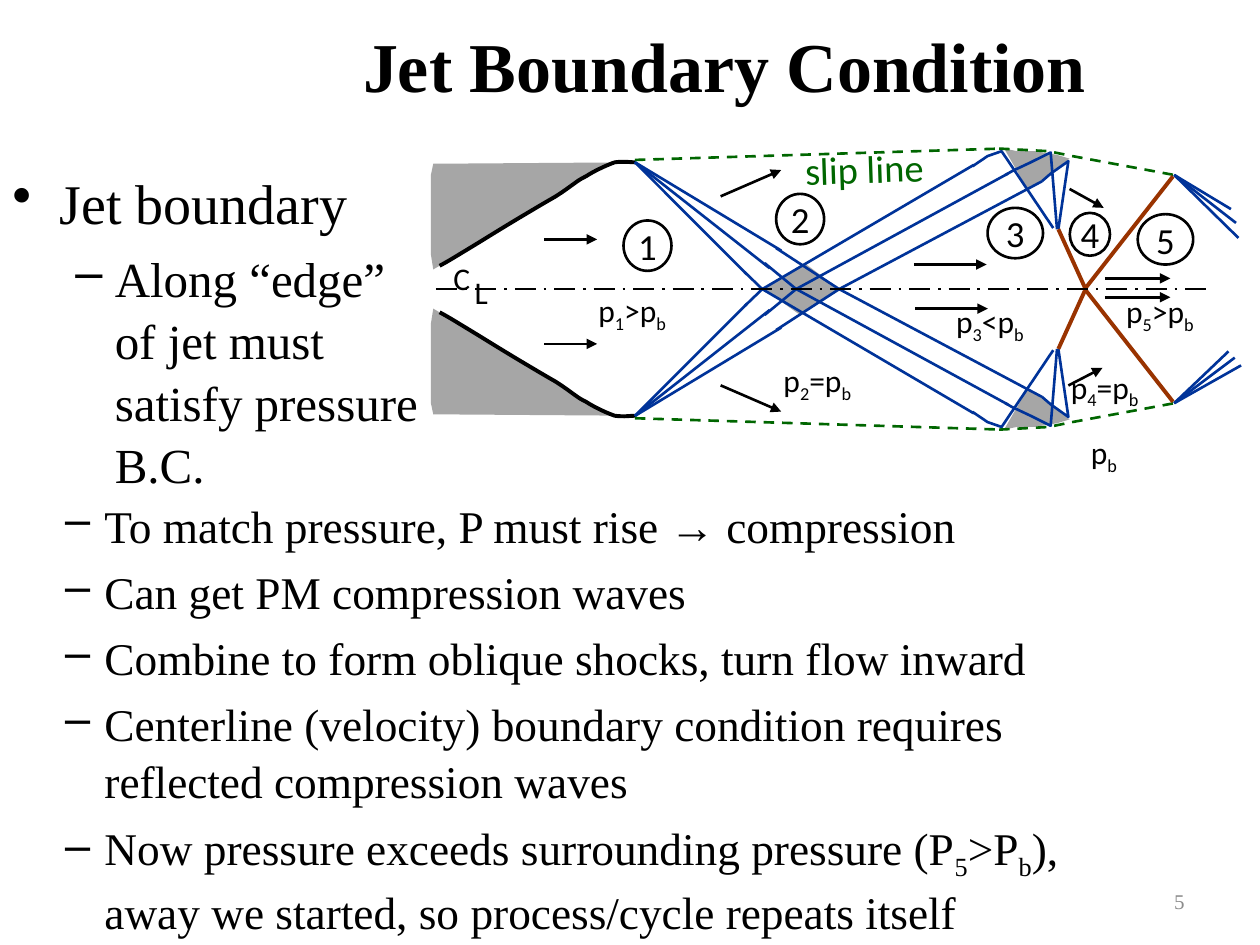
from dataclasses import dataclass

from lxml import etree
from pptx import Presentation
from pptx.dml.color import RGBColor
from pptx.enum.dml import MSO_LINE_DASH_STYLE as Dash
from pptx.enum.shapes import MSO_CONNECTOR, MSO_SHAPE
from pptx.enum.text import MSO_ANCHOR as Anchor, PP_ALIGN as Align
from pptx.oxml.ns import qn
from pptx.util import Pt


@dataclass(frozen=True)
class Theme:
    black: str = "000000"
    white: str = "FFFFFF"
    gray: str = "A6A6A6"
    muted: str = "8C8C8C"
    wave: str = "003399"
    shock: str = "993300"
    boundary: str = "006600"
    serif: str = "Times New Roman"
    sans: str = "Calibri"
    title: float = 40
    heading: float = 32
    point: float = 28
    detail: float = 25.9
    slip: float = 22
    number: float = 21
    label: float = 18
    footer: float = 12
    thin: float = 1.5
    thick: float = 2.25


@dataclass(frozen=True)
class Box:
    left: float
    top: float
    width: float
    height: float

    def place(self, x, rise):
        return Pt(self.left + x), Pt(self.top + self.height / 2 - rise)


THEME = Theme()
WALL = [(5, 13.3), (9.4, 15.5), (17.3, 20.5), (28.1, 27), (39.6, 34.2), (61.2, 47.2),
        (71.3, 52.9), (81.4, 59.4), (82.8, 61.6), (88.6, 64.4), (94.3, 68),
        (100.8, 70.9), (105.1, 72.4), (110.2, 73.1), (114.5, 72.4), (116.6, 72.4)]
NOZZLE_EDGE = [(1.4, 71.6), (0, 65), (0, 20), (1.4, 11.2)]
LIP = (116.6, 72.5)
EXPANSION_ENDS = [(180.7, 8.3), (193.7, 11.9), (200.2, 22)]
CROSSINGS = [[(179.3, 9.7), (189.4, 0), (310.3, 71)],
             [(190.8, 14.8), (208.8, 0), (329.8, 66)],
             [(197.3, 23.4), (233.3, 0), (349.2, 61.6)]]
REFLECTIONS = [[(309.6, 70.2), (318.2, 76), (326.2, 78.8), (355.7, 34.9)],
               [(328.3, 65.2), (331.9, 67.3), (342.7, 72.4), (354.2, 78.1), (357.8, 34.2)],
               [(349.2, 61.6), (354.2, 65.9), (364.3, 73.1), (358.6, 34.2)]]
REFLECTION_ZONE = [(327.6, 80.3), (341.3, 56.5), (365, 74.5), (357.8, 76.7),
                   (344.9, 78.8), (334.8, 78.8)]
CROSSING_ZONE = [(190.1, 0), (214.6, 14), (234, -0.5), (211, -14.8)]
JET_BOUNDARIES = [[(116.6, 73.8), (326.2, 80.3)],
                  [(324.7, 80.3), (352.8, 78.8), (366.5, 76), (424.8, 65.2)]]
SHOCKS = [[(358.6, 34.2), (373.7, 1)], [(373.7, 0), (424.1, 64.4)]]
SHOCK_END = (424.8, 65.2)
NEXT_FAN_ABOVE = [(461.5, 29.2), (460.1, 37.8), (457.2, 45.7)]
NEXT_FAN_BELOW = [(455.8, 35.6), (459.4, 39.2), (463, 43.6)]
FLOW_ARROWS = [((64.8, 28.4), (95, 28.4)), ((64.8, -31.3), (95, -31.3)),
               ((165.6, 53), (200.2, 68)), ((165.6, -55), (200.2, -70)),
               ((276, 14), (317.6, 14)), ((276.7, -11.2), (318.3, -11.2)),
               ((385.2, 6.1), (422.6, 6.1)), ((385.2, -4.7), (422.6, -4.7)),
               ((364.3, -55.1), (383.8, -45)), ((365, 57.2), (384.5, 46.4))]
REGIONS = [("1", 123.8, 24.8, 27.4, 28.8), ("2", 211, 40, 27.4, 28.8),
           ("3", 334, 32, 31.7, 28.8), ("4", 376.6, 31.3, 23, 24.5),
           ("5", 419.8, 28.4, 31.7, 28.8)]
LABELS = [("C", 5.8, 20.5), ("L", 18, 12.6), ("p|1|>p|b", 88.6, 2.6),
          ("p|2|=p|b", 194.4, -37.7), ("p|3|<p|b", 293, -3.8),
          ("p|4|=p|b", 358.6, -41.3), ("p|5|>p|b", 390.2, 1.9), ("p|b", 370.1, -78.7)]


def rgb(value):
    return RGBColor.from_string(value)


def add_runs(paragraph, text, size, color, font, bold=False):
    for index, part in enumerate(text.split("|")):
        run = paragraph.add_run()
        run.text = part
        run.font.size, run.font.name, run.font.bold = Pt(size), font, bold
        run.font.color.rgb = rgb(color)
        if index % 2:
            run.font._element.set("baseline", "-25000")


def add_text_box(slide, box, anchor=Anchor.TOP):
    shape = slide.shapes.add_textbox(Pt(box.left), Pt(box.top), Pt(box.width), Pt(box.height))
    shape.text_frame.word_wrap = True
    shape.text_frame.vertical_anchor = anchor
    return shape


def add_line_of_text(slide, box, text, size, color, font, align=Align.LEFT,
                     anchor=Anchor.TOP, bold=False):
    shape = add_text_box(slide, box, anchor)
    paragraph = shape.text_frame.paragraphs[0]
    paragraph.alignment = align
    add_runs(paragraph, text, size, color, font, bold)
    return shape


def add_bullets(slide, box, items):
    frame = add_text_box(slide, box).text_frame
    for index, (mark, text, size, margin, hanging) in enumerate(items):
        paragraph = frame.add_paragraph() if index else frame.paragraphs[0]
        properties = paragraph._p.get_or_add_pPr()
        properties.set("marL", str(Pt(margin)))
        properties.set("indent", str(-Pt(hanging)))
        etree.SubElement(properties, qn("a:buChar")).set("char", mark)
        paragraph.line_spacing = 1.05
        paragraph.space_before = Pt(round(size * 0.2, 1) if index else 0)
        add_runs(paragraph, text, size, THEME.black, THEME.serif)


def add_outline(slide, box, points, line=None, width=THEME.thin, fill=None, dash=None):
    start, *others = [box.place(*point) for point in points]
    builder = slide.shapes.build_freeform(*start, scale=1.0)
    builder.add_line_segments(others, close=fill is not None)
    shape = builder.convert_to_shape()
    shape.shadow.inherit = False
    if fill:
        shape.fill.solid()
        shape.fill.fore_color.rgb = rgb(fill)
        shape.line.fill.background()
    else:
        shape.fill.background()
        shape.line.color.rgb, shape.line.width = rgb(line), Pt(width)
        shape.line.dash_style = dash


def add_segment(slide, box, start, end, color, width=THEME.thin, dash=None, arrow=False):
    connector = slide.shapes.add_connector(
        MSO_CONNECTOR.STRAIGHT, *box.place(*start), *box.place(*end))
    connector.line.color.rgb, connector.line.width = rgb(color), Pt(width)
    connector.line.dash_style = dash
    if arrow:
        etree.SubElement(connector.line._get_or_add_ln(), qn("a:tailEnd")).set("type", "triangle")
    etree.SubElement(connector._element.spPr, qn("a:effectLst"))


def smooth_curve(controls, steps=8):
    points = [controls[0]]
    for first in range(0, len(controls) - 1, 3):
        a, b, c, d = controls[first:first + 4]
        for step in range(1, steps + 1):
            t = step / steps
            u = 1 - t
            points.append(tuple(u**3 * i + 3 * u * u * t * j + 3 * u * t * t * k + t**3 * m
                                for i, j, k, m in zip(a, b, c, d)))
    return points


def add_jet_half(slide, box, side, next_fan):
    def mirror(points):
        return [(x, side * rise) for x, rise in points]

    wall = smooth_curve(WALL)
    add_outline(slide, box, mirror(wall + NOZZLE_EDGE), fill=THEME.gray)
    add_outline(slide, box, mirror(wall), THEME.black, THEME.thick)
    add_outline(slide, box, mirror(REFLECTION_ZONE), fill=THEME.gray)
    for origin, ends in ((LIP, EXPANSION_ENDS), (SHOCK_END, next_fan)):
        for end in ends:
            add_segment(slide, box, *mirror([origin, end]), THEME.wave)
    for points in CROSSINGS + REFLECTIONS:
        add_outline(slide, box, mirror(points), THEME.wave)
    for points in JET_BOUNDARIES:
        add_outline(slide, box, mirror(points), THEME.boundary, dash=Dash.DASH)
    for points in SHOCKS:
        add_segment(slide, box, *mirror(points), THEME.shock, THEME.thick)


def add_region_number(slide, box, text, x, rise, width, height):
    left, top = box.place(x - width / 2, rise + height / 2)
    shape = slide.shapes.add_shape(MSO_SHAPE.OVAL, left, top, Pt(width), Pt(height))
    shape.shadow.inherit = False
    shape.fill.solid()
    shape.fill.fore_color.rgb = rgb(THEME.white)
    shape.line.color.rgb, shape.line.width = rgb(THEME.black), Pt(THEME.thin)
    frame = shape.text_frame
    frame.margin_left = frame.margin_right = frame.margin_top = frame.margin_bottom = 0
    frame.word_wrap = False
    frame.vertical_anchor = Anchor.MIDDLE
    frame.paragraphs[0].alignment = Align.CENTER
    add_runs(frame.paragraphs[0], text, THEME.number, THEME.black, THEME.sans)


def add_jet_diagram(slide, box):
    add_outline(slide, box, CROSSING_ZONE, fill=THEME.gray)
    add_jet_half(slide, box, 1, NEXT_FAN_ABOVE)
    add_jet_half(slide, box, -1, NEXT_FAN_BELOW)
    add_segment(slide, box, (2.9, 0), (445, 0), THEME.black, dash=Dash.LONG_DASH_DOT)
    for start, end in FLOW_ARROWS:
        add_segment(slide, box, start, end, THEME.black, arrow=True)
    for region in REGIONS:
        add_region_number(slide, box, *region)
    for text, x, rise in LABELS:
        left, top = box.place(x, rise)
        width = 68 if len(text) > 3 else 39 if len(text) > 1 else 30
        add_line_of_text(slide, Box(left.pt, top.pt, width, 36), text,
                         THEME.label, THEME.black, THEME.sans)
    slip = add_line_of_text(slide, Box(box.left + 206.7, box.top - 4.8, 87, 34), "slip line",
                            THEME.slip, THEME.boundary, THEME.sans)
    slip.rotation = 358


def main():
    presentation = Presentation()
    presentation.slide_width, presentation.slide_height = Pt(720), Pt(540)
    slide = presentation.slides.add_slide(presentation.slide_layouts[6])
    add_line_of_text(slide, Box(144, 10.8, 540, 52.6), "Jet Boundary Condition", THEME.title,
                     THEME.black, THEME.serif, Align.CENTER, Anchor.MIDDLE, True)
    add_bullets(slide, Box(0, 91, 251.3, 192), [
        ("•", "Jet boundary", THEME.heading, 27, 27),
        ("–", "Along “edge” of jet must satisfy pressure B.C.", THEME.point, 58.5, 22.5)])
    add_bullets(slide, Box(0, 279.4, 642, 224.6), [
        ("–", text, THEME.detail, 52.6, 22.5) for text in (
            "To match pressure, P must rise → compression",
            "Can get PM compression waves",
            "Combine to form oblique shocks, turn flow inward",
            "Centerline (velocity) boundary condition requires reflected compression waves",
            "Now pressure exceeds surrounding pressure (P|5|>P|b|), "
            "away we started, so process/cycle repeats itself")])
    add_jet_diagram(slide, Box(246.2, 84, 464, 162.4))
    add_line_of_text(slide, Box(516, 500.5, 168, 28.8), "5", THEME.footer, THEME.muted,
                     THEME.serif, Align.RIGHT, Anchor.MIDDLE)
    presentation.save("out.pptx")


if __name__ == "__main__":
    main()
